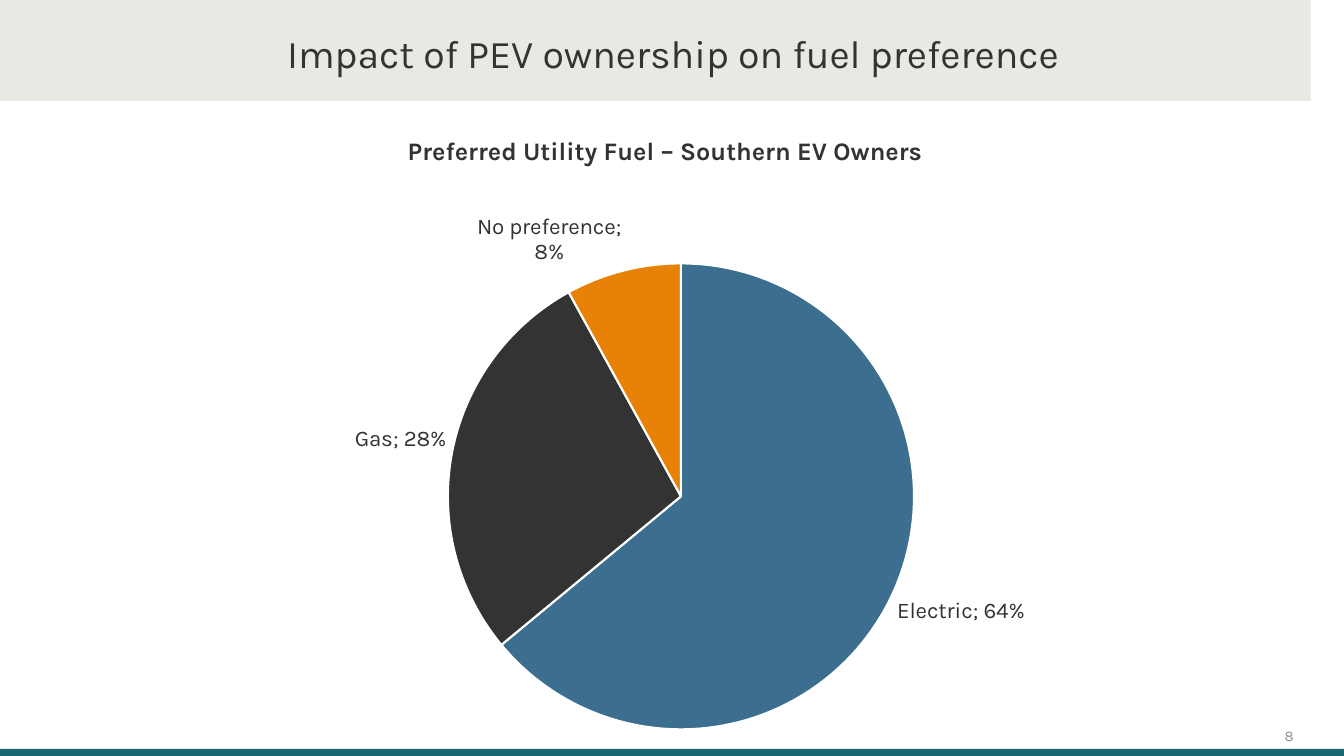
"""Build a slide with a pie chart of the fuel preferred by Southern EV owners."""
from lxml.etree import SubElement
from pptx import Presentation
from pptx.chart.data import CategoryChartData
from pptx.dml.color import RGBColor
from pptx.enum.chart import XL_CHART_TYPE, XL_LABEL_POSITION
from pptx.enum.shapes import MSO_SHAPE
from pptx.enum.text import MSO_ANCHOR, PP_ALIGN
from pptx.oxml.ns import qn
from pptx.util import Inches, Pt

INK = "333333"
WIDTH, HEIGHT = 13.33, 7.5
CURVE_STEPS = 60


def paint(color_format, hex_color):
    color_format.rgb = RGBColor.from_string(hex_color)


def style(font, size, hex_color, bold=False):
    font.name, font.size, font.bold = "Karla", Pt(size), bold
    paint(font.color, hex_color)


deck = Presentation()
deck.slide_width, deck.slide_height = Inches(WIDTH), Inches(HEIGHT)
slide = deck.slides.add_slide(deck.slide_layouts[5])
heading = slide.shapes.title

footer_bar = slide.shapes.add_shape(
    MSO_SHAPE.RECTANGLE, 0, Inches(HEIGHT - 0.07), Inches(WIDTH), Inches(0.07))

edge_y, sag = 0.94, 0.13
curve = []
for step in range(CURVE_STEPS + 1):
    share = 1 - step / CURVE_STEPS
    curve.append((share * WIDTH, edge_y + sag * (1 - (2 * share - 1) ** 2)))
outline = slide.shapes.build_freeform(0, 0, scale=Inches(1))
outline.add_line_segments([(WIDTH, 0)] + curve, close=True)
header_band = outline.convert_to_shape()

for area, hex_color in ((footer_bar, "196872"), (header_band, "E9E9E3")):
    area.shadow.inherit = False
    area.fill.solid()
    paint(area.fill.fore_color, hex_color)
    area.line.fill.background()

slide.shapes._spTree.append(heading._element)
heading.left, heading.top = Inches(2.6), Inches(0.29)
heading.width, heading.height = Inches(8.15), Inches(0.47)
page_number = slide.shapes.add_textbox(
    Inches(9.72), Inches(6.99), Inches(3.11), Inches(0.4))

for holder, words, size, hex_color, align, anchor in (
    (heading, "Impact of PEV ownership on fuel preference", 28, INK,
     PP_ALIGN.CENTER, MSO_ANCHOR.MIDDLE),
    (page_number, "8", 10.5, "909090", PP_ALIGN.RIGHT, MSO_ANCHOR.BOTTOM),
):
    frame = holder.text_frame
    frame.text = words
    frame.word_wrap = True
    frame.vertical_anchor = anchor
    frame.margin_left = frame.margin_right = frame.margin_top = frame.margin_bottom = 0
    frame.paragraphs[0].alignment = align
    style(frame.paragraphs[0].font, size, hex_color)

preferences = CategoryChartData(number_format="0%")
preferences.categories = ["Electric", "Gas", "No preference"]
preferences.add_series("Series 1", [0.64, 0.28, 0.08])
chart = slide.shapes.add_chart(
    XL_CHART_TYPE.PIE, Inches(2.22), Inches(1.07), Inches(8.89), Inches(6.32),
    preferences).chart
style(chart.font, 10, INK)
chart.has_legend = False
chart.has_title = True
chart_title = chart.chart_title.text_frame
chart_title.text = "Preferred Utility Fuel – Southern EV Owners"
style(chart_title.paragraphs[0].font, 18, INK, bold=True)

pie = chart.plots[0]
pie.vary_by_categories = True
for index, hex_color in enumerate(("3B6E8F", INK, "E78207")):
    slice_format = pie.series[0].points[index].format
    slice_format.fill.solid()
    paint(slice_format.fill.fore_color, hex_color)
    slice_format.line.width = Pt(1.5)
    paint(slice_format.line.color, "FFFFFF")

labels = pie.series[0].data_labels
labels.show_category_name = labels.show_value = True
labels.show_percentage = False
labels.number_format, labels.number_format_is_linked = "0%", False
labels.position = XL_LABEL_POSITION.OUTSIDE_END
style(labels.font, 16, INK)
separator = SubElement(labels._element, qn("c:separator"))
separator.text = "; "
labels._element.find(qn("c:showBubbleSize")).addnext(separator)

title_place = {"xMode": "edge", "yMode": "edge", "x": 0.2, "y": 0.035}
pie_place = {"layoutTarget": "inner", "xMode": "edge", "yMode": "edge",
             "x": 0.25, "y": 0.24, "w": 0.52, "h": 0.74}
plot_area = chart._chartSpace.chart.plotArea
for part, place in ((chart.chart_title._element, title_place), (plot_area, pie_place)):
    layout = part.find(qn("c:layout"))
    if layout is None:
        layout = SubElement(part, qn("c:layout"))
        if part is plot_area:
            part.insert(0, layout)
        else:
            part.find(qn("c:tx")).addnext(layout)
    manual = SubElement(layout, qn("c:manualLayout"))
    for key, value in place.items():
        SubElement(manual, qn(f"c:{key}")).set("val", str(value))

deck.save("out.pptx")
